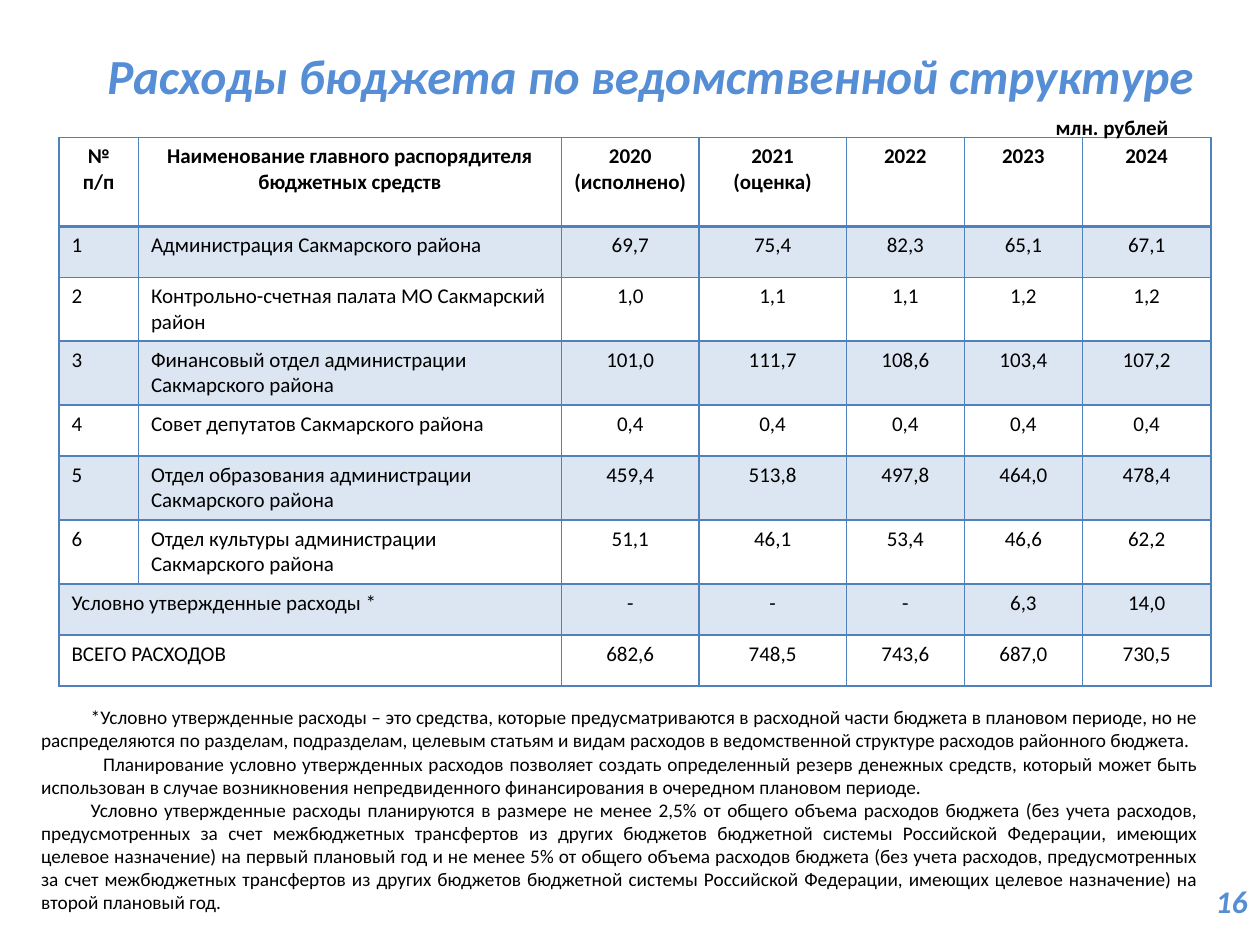
from pptx import Presentation
from pptx.dml.color import RGBColor
from pptx.enum.text import MSO_ANCHOR as Anchor, PP_ALIGN as Align
from pptx.oxml.ns import qn
from pptx.util import Cm, Pt
from lxml.etree import SubElement

COLORS = {"accent": "558ED5", "text": "000000", "border": "4F81BD",
          "band": "DCE6F2", "plain": "FFFFFF"}
FONT = "Calibri"

COL_WIDTHS = [1.6, 8.53, 2.77, 2.97, 2.38, 2.38, 2.59]
HEADER_H, SHORT_H, TALL_H = 1.79, 1.03, 1.27
HEADER = ["№ п/п", "Наименование главного распорядителя бюджетных средств",
          "2020 (исполнено)", "2021\n(оценка)", "2022", "2023", "2024"]
DEPARTMENTS = [
    ("Администрация Сакмарского района", "69,7 75,4 82,3 65,1 67,1", SHORT_H),
    ("Контрольно-счетная палата МО Сакмарский район", "1,0 1,1 1,1 1,2 1,2", TALL_H),
    ("Финансовый отдел администрации Сакмарского района",
     "101,0 111,7 108,6 103,4 107,2", TALL_H),
    ("Совет депутатов Сакмарского района", "0,4 0,4 0,4 0,4 0,4", SHORT_H),
    ("Отдел образования администрации Сакмарского района",
     "459,4 513,8 497,8 464,0 478,4", TALL_H),
    ("Отдел культуры администрации Сакмарского района",
     "51,1 46,1 53,4 46,6 62,2", TALL_H),
]
SUMMARY = [("Условно утвержденные расходы *", "- - - 6,3 14,0"),
           ("ВСЕГО РАСХОДОВ", "682,6 748,5 743,6 687,0 730,5")]
NOTES = [
    (1, "*Условно утвержденные расходы – это средства, которые предусматриваются в "
        "расходной части бюджета в плановом периоде, но не распределяются по разделам, "
        "подразделам, целевым статьям и видам расходов в ведомственной структуре "
        "расходов районного бюджета."),
    (1.25, "Планирование условно утвержденных расходов позволяет создать определенный "
           "резерв денежных средств, который может быть использован в случае "
           "возникновения непредвиденного финансирования в очередном плановом периоде."),
    (1, "Условно утвержденные расходы планируются в размере не менее 2,5% от общего "
        "объема расходов бюджета (без учета расходов, предусмотренных за счет "
        "межбюджетных трансфертов из других бюджетов бюджетной системы Российской "
        "Федерации, имеющих целевое назначение) на первый плановый год и не менее 5% от "
        "общего объема расходов бюджета (без учета расходов, предусмотренных за счет "
        "межбюджетных трансфертов из других бюджетов бюджетной системы Российской "
        "Федерации, имеющих целевое назначение) на второй плановый год."),
]


def write(tf, text, size=12, color="text", bold=False, italic=False,
          align=Align.LEFT, indents=()):
    """Fill a text frame, one paragraph per line; indents are first-line, in cm."""
    for i, line in enumerate(text.split("\n")):
        p = tf.paragraphs[0] if i == 0 else tf.add_paragraph()
        p.alignment = align
        if indents:
            p._p.get_or_add_pPr().set("indent", str(Cm(indents[i])))
        r = p.add_run()
        r.text = line
        r.font.name, r.font.size = FONT, Pt(size)
        r.font.bold, r.font.italic = bold, italic
        r.font.color.rgb = RGBColor.from_string(COLORS[color])


def set_borders(cell, top=1, bottom=1):
    tc_pr = cell._tc.get_or_add_tcPr()
    for side, width in (("L", 1), ("R", 1), ("T", top), ("B", bottom)):
        ln = SubElement(tc_pr, qn(f"a:ln{side}"), w=str(Pt(width)))
        fill = SubElement(ln, qn("a:solidFill"))
        SubElement(fill, qn("a:srgbClr"), val=COLORS["border"])


class SlideBuilder:
    def __init__(self, prs):
        self.s = prs.slides.add_slide(prs.slide_layouts[5])

    def title(self, text, x, y, w, h):
        sp = self.s.shapes.title
        sp.left, sp.top, sp.width, sp.height = Cm(x), Cm(y), Cm(w), Cm(h)
        tf = sp.text_frame
        tf.word_wrap = False
        tf.vertical_anchor = Anchor.MIDDLE
        write(tf, text, size=28, color="accent", bold=True, italic=True,
              align=Align.CENTER)

    def text(self, text, x, y, w, h, wrap=True, anchor=Anchor.TOP, **fmt):
        tf = self.s.shapes.add_textbox(Cm(x), Cm(y), Cm(w), Cm(h)).text_frame
        tf.word_wrap = wrap
        tf.vertical_anchor = anchor
        write(tf, text, **fmt)

    def table(self, rows, heights, x, y):
        """Draw the rows; a row whose second cell is None joins its first two cells."""
        frame = self.s.shapes.add_table(len(rows), len(COL_WIDTHS), Cm(x), Cm(y),
                                        Cm(sum(COL_WIDTHS)), Cm(sum(heights)))
        table = frame.table
        table.first_row = table.horz_banding = False
        for col, width in zip(table.columns, COL_WIDTHS):
            col.width = Cm(width)
        for i, (values, height) in enumerate(zip(rows, heights)):
            table.rows[i].height = Cm(height)
            if values[1] is None:
                table.cell(i, 0).merge(table.cell(i, 1))
            for j, value in enumerate(values):
                cell = table.cell(i, j)
                set_borders(cell, top=2 if i == 1 else 1, bottom=2 if i == 0 else 1)
                cell.fill.solid()
                cell.fill.fore_color.rgb = RGBColor.from_string(
                    COLORS["band" if i % 2 else "plain"])
                if value is not None:
                    centred = i == 0 or j > 1
                    write(cell.text_frame, value, bold=i == 0,
                          align=Align.CENTER if centred else Align.LEFT)


def main():
    prs = Presentation()
    prs.slide_width, prs.slide_height = Cm(25.4), Cm(19.05)
    slide = SlideBuilder(prs)

    slide.title("Расходы бюджета по ведомственной структуре", 1.78, 0.79, 22.66, 1.45)

    rows = [HEADER]
    rows += [[str(n), name, *values.split()]
             for n, (name, values, _) in enumerate(DEPARTMENTS, 1)]
    rows += [[name, None, *values.split()] for name, values in SUMMARY]
    heights = [HEADER_H, *(h for _, _, h in DEPARTMENTS), *[SHORT_H] * len(SUMMARY)]
    slide.table(rows, heights, 1.19, 2.77)

    slide.text("млн. рублей", 21.03, 2.18, 2.79, 0.76, wrap=False, bold=True)
    slide.text("16", 19.48, 17.65, 5.92, 1.02, anchor=Anchor.MIDDLE, size=18,
               color="accent", bold=True, italic=True, align=Align.RIGHT)
    slide.text("\n".join(note for _, note in NOTES), 0.58, 14.1, 23.83, 4.5,
               size=11, align=Align.JUSTIFY, indents=[indent for indent, _ in NOTES])

    prs.save("out.pptx")


if __name__ == "__main__":
    main()
